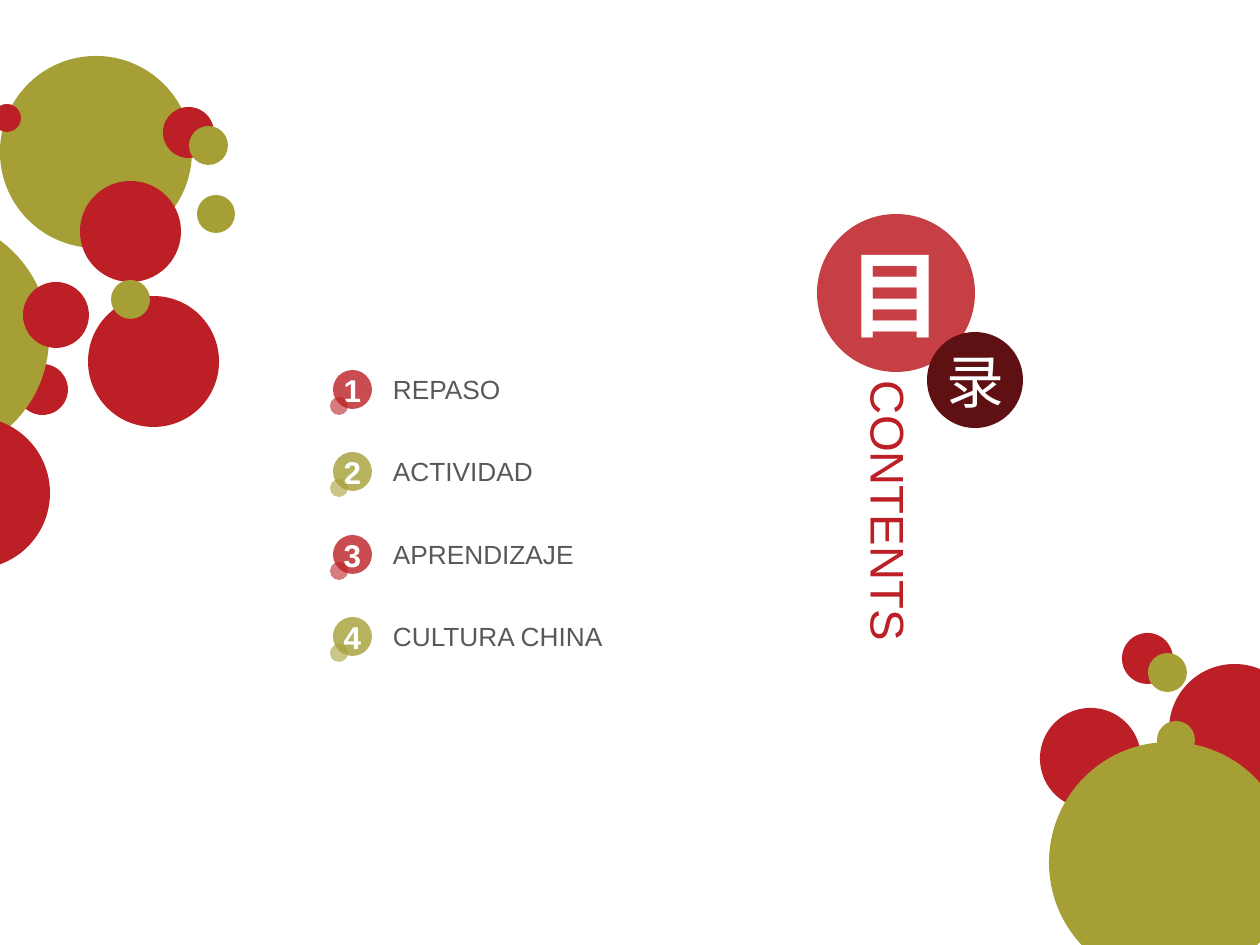
"""Build a contents slide with four numbered topics among red and olive circles."""
from typing import NamedTuple, Optional

from lxml.etree import SubElement
from pptx import Presentation
from pptx.dml.color import RGBColor
from pptx.enum.shapes import MSO_SHAPE
from pptx.enum.text import MSO_ANCHOR, MSO_AUTO_SIZE, PP_ALIGN
from pptx.oxml.ns import qn
from pptx.shapes.autoshape import Shape
from pptx.shapes.shapetree import SlideShapes
from pptx.util import Emu, Pt

PX_PER_INCH = 126
RED = RGBColor(0xBC, 0x20, 0x26)
OLIVE = RGBColor(0xA5, 0x9F, 0x36)
MAROON = RGBColor(0x5E, 0x10, 0x13)
GRAY = RGBColor(0x59, 0x59, 0x59)
WHITE = RGBColor(0xFF, 0xFF, 0xFF)
FONT = "Arial"


class Circle(NamedTuple):
    left: int
    top: int
    size: int
    color: RGBColor
    opacity: int = 100


class Label(NamedTuple):
    text: str
    points: int
    color: RGBColor
    bold: bool = False
    align: Optional[PP_ALIGN] = None


BACK_CIRCLES = [
    Circle(1169, 664, 131, RED),
    Circle(17, 364, 51, RED),
    Circle(88, 296, 131, RED),
]
FRONT_CIRCLES = [
    Circle(0, 56, 192, OLIVE),
    Circle(80, 181, 101, RED),
    Circle(197, 195, 38, OLIVE),
    Circle(-192, 217, 241, OLIVE),
    Circle(-7, 104, 28, RED),
    Circle(23, 282, 66, RED),
    Circle(111, 280, 39, OLIVE),
    Circle(163, 107, 51, RED),
    Circle(189, 126, 39, OLIVE),
    Circle(-102, 417, 152, RED),
    Circle(1040, 708, 101, RED),
    Circle(1157, 721, 38, OLIVE),
    Circle(1122, 633, 51, RED),
    Circle(1148, 653, 39, OLIVE),
    Circle(1049, 742, 241, OLIVE),
]
TOPICS = ["REPASO", "ACTIVIDAD", "APRENDIZAJE", "CULTURA CHINA"]
FIRST_TOPIC_TOP = 370
LAST_TOPIC_TOP = 617


def px(length: int) -> Emu:
    """Turn pixels into EMU."""
    return Emu(length * 914400 // PX_PER_INCH)


def write(shape: Shape, label: Label, wrap: bool = True) -> None:
    """Put a vertically centred label without margins into a shape."""
    frame = shape.text_frame
    frame.word_wrap = wrap
    frame.vertical_anchor = MSO_ANCHOR.MIDDLE
    frame.margin_left = frame.margin_right = 0
    frame.margin_top = frame.margin_bottom = 0
    line = frame.paragraphs[0]
    line.text = label.text
    line.alignment = label.align
    line.font.name = FONT
    line.font.size = Pt(label.points)
    line.font.bold = label.bold
    line.font.color.rgb = label.color


def draw_circle(shapes: SlideShapes, circle: Circle) -> Shape:
    """Draw a filled circle without outline."""
    size = px(circle.size)
    disc = shapes.add_shape(MSO_SHAPE.OVAL, px(circle.left), px(circle.top), size, size)
    disc.shadow.inherit = False
    disc.line.fill.background()
    disc.fill.solid()
    disc.fill.fore_color.rgb = circle.color
    if circle.opacity < 100:
        tint = disc.fill._xPr.find(qn("a:solidFill"))[0]
        SubElement(tint, qn("a:alpha")).set("val", str(circle.opacity * 1000))
    return disc


def draw_text(shapes: SlideShapes, left: int, top: int, width: int, height: int,
              label: Label) -> Shape:
    """Draw a text box."""
    box = shapes.add_textbox(px(left), px(top), px(width), px(height))
    write(box, label)
    return box


def draw_topic(shapes: SlideShapes, index: int, topic: str) -> None:
    """Draw one numbered topic of the list."""
    pitch = (LAST_TOPIC_TOP - FIRST_TOPIC_TOP) / (len(TOPICS) - 1)
    top = round(FIRST_TOPIC_TOP + index * pitch)
    color = OLIVE if index % 2 else RED
    badge = draw_circle(shapes, Circle(333, top, 39, color, 80))
    write(badge, Label(str(index + 1), 18, WHITE, True, PP_ALIGN.CENTER), wrap=False)
    draw_circle(shapes, Circle(330, top + 27, 18, color, 59))
    name = draw_text(shapes, 393, top + 3, 287, 32, Label(topic, 15, GRAY))
    name.text_frame.auto_size = MSO_AUTO_SIZE.SHAPE_TO_FIT_TEXT


def draw_title(shapes: SlideShapes) -> None:
    """Draw the two title circles and the vertical heading."""
    first = draw_circle(shapes, Circle(817, 214, 158, RED, 86))
    write(first, Label("目", 54, WHITE, True, PP_ALIGN.CENTER))
    second = draw_circle(shapes, Circle(927, 332, 96, MAROON))
    write(second, Label("录", 33, WHITE, False, PP_ALIGN.CENTER))
    heading = draw_text(shapes, 858, 381, 63, 284, Label("CONTENTS", 27, RED))
    heading.text_frame._txBody.bodyPr.set("vert", "eaVert")


def main() -> None:
    """Build and save the slide."""
    deck = Presentation()
    deck.slide_width, deck.slide_height = px(1260), px(945)
    shapes = deck.slides.add_slide(deck.slide_layouts[6]).shapes
    for circle in BACK_CIRCLES:
        draw_circle(shapes, circle)
    for index, topic in enumerate(TOPICS):
        draw_topic(shapes, index, topic)
    draw_title(shapes)
    for circle in FRONT_CIRCLES:
        draw_circle(shapes, circle)
    deck.save("out.pptx")


if __name__ == "__main__":
    main()
